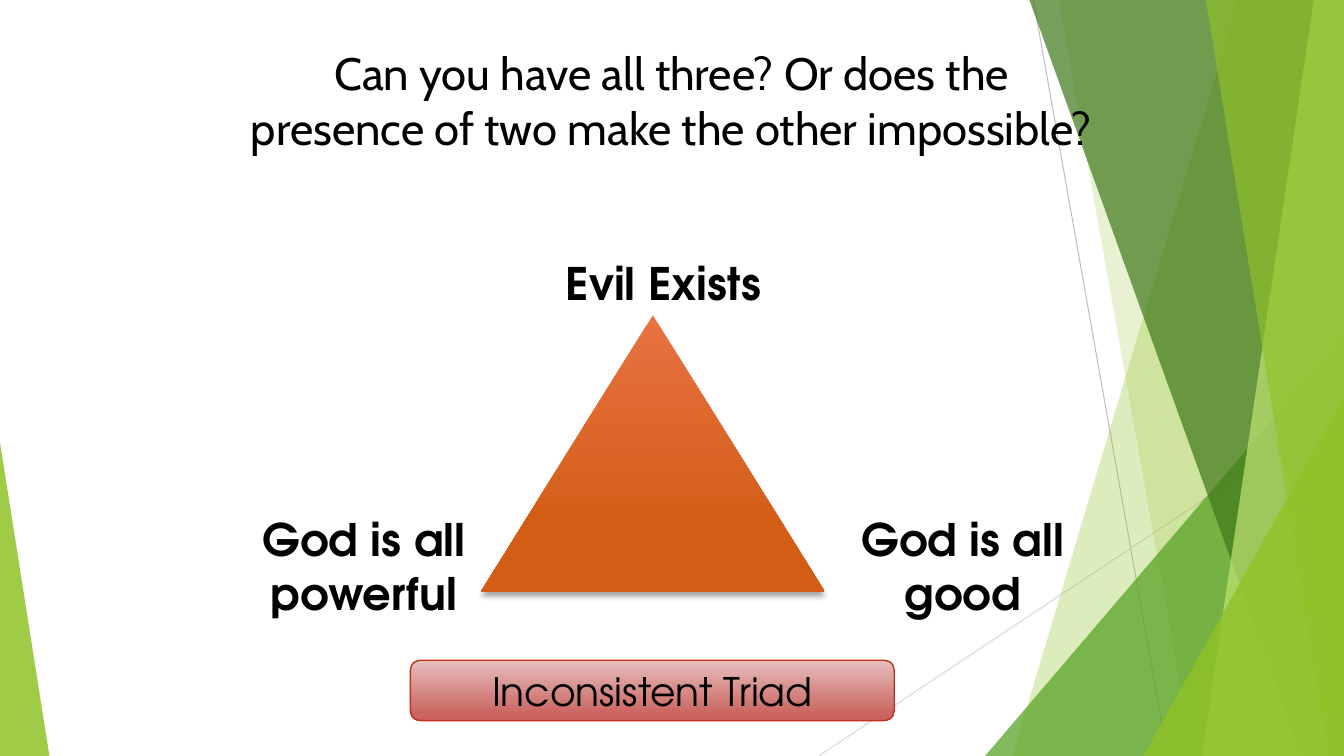
"""Build the Inconsistent Triad slide: three claims around a triangle on a faceted green background."""
from lxml import etree
from pptx import Presentation, util as u
from pptx.dml.color import RGBColor
from pptx.enum import shapes, text
from pptx.oxml import parse_xml
from pptx.oxml.ns import qn

WIDTH, HEIGHT = 13.33, 7.5
A_NS = "http://schemas.openxmlformats.org/drawingml/2006/main"
KIND = shapes.MSO_SHAPE
LEAF, BLACK = "90C226", "000000"
CLAIM_FONT = "TeX Gyre Adventor"

TITLE = ("Can you have all three? Or does the presence of two make the other impossible?",
         (2.35, 0.4, 8.62, 1.75))
CLAIMS = [
    ("Evil Exists", (5.46, 2.49, 2.24, 0.64)),
    ("God is all powerful", (2.01, 5.03, 3.2, 1.18)),
    ("God is all good", (7.95, 5.03, 3.2, 1.18)),
]
TRIAD_BOX = (4.77, 3.13, 3.41, 2.74)
TRIAD_GRADIENT = [(0, "E87242"), (0.78, "D35D16")]
CAPTION = ("Inconsistent Triad", (4.07, 6.55, 4.8, 0.6))
CAPTION_GRADIENT = [(0, "E6BFBE"), (0.88, "CB6560")]

RAYS = [((10.25, 0), (11.58, HEIGHT), "BFBFBF"),
        ((WIDTH, 4.03), (8.12, HEIGHT), "D9D9D9")]
# Bands run to the right edge; facets are right triangles on the bottom edge.
FACETS = [
    ("band", 12.28, 10.04, LEAF, 30),
    ("band", 10.5, 11.83, LEAF, 20),
    ("right", 3.56, 4.17, "54A021", 72),
    ("band", 10.21, 12.91, "3F7819", 70),
    ("band", 13.03, 11.92, "C0E474", 70),
    ("band", 11.96, 13.18, LEAF, 65),
    ("right", 1.99, 3.57, LEAF, 80),
    ("left", 0.49, 3.11, LEAF, 85),
]


def color(hex_code):
    return RGBColor.from_string(hex_code)


def inches(values):
    return [u.Inches(value) for value in values]


def paint(shape, hex_code, opacity):
    shape.shadow.inherit = False
    shape.line.fill.background()
    shape.fill.solid()
    shape.fill.fore_color.rgb = color(hex_code)
    tint = shape.fill._xPr.find(".//" + qn("a:srgbClr"))
    etree.SubElement(tint, qn("a:alpha"), val=str(opacity * 1000))


def shade(shape, gradient):
    shape.shadow.inherit = False
    shape.fill.gradient()
    shape.fill.gradient_angle = 270
    for stop, (position, hex_code) in zip(shape.fill.gradient_stops, gradient):
        stop.position = position
        stop.color.rgb = color(hex_code)


def write(shape, wording, size, font_name, bold=False, anchor=text.MSO_ANCHOR.TOP):
    frame = shape.text_frame
    frame.text = wording
    frame.word_wrap = True
    frame.vertical_anchor = anchor
    paragraph = frame.paragraphs[0]
    paragraph.alignment = text.PP_ALIGN.CENTER
    font = paragraph.font
    font.size, font.name, font.bold = u.Pt(size), font_name, bold
    font.color.rgb = color(BLACK)


def draw_background(slide):
    for start, end, hex_code in RAYS:
        ray = slide.shapes.add_connector(shapes.MSO_CONNECTOR.STRAIGHT, *inches(start + end))
        ray.line.color.rgb = color(hex_code)
        ray.line.width = u.Pt(0.75)
        etree.SubElement(ray._element.spPr, qn("a:effectLst"))
    for side, first, second, hex_code, opacity in FACETS:
        if side == "band":
            outline = slide.shapes.build_freeform(*inches((first, 0)), scale=1.0)
            corners = [(WIDTH, 0), (WIDTH, HEIGHT), (second, HEIGHT)]
            outline.add_line_segments([inches(corner) for corner in corners], close=True)
            facet = outline.convert_to_shape()
        else:
            left = WIDTH - first if side == "right" else 0
            facet = slide.shapes.add_shape(
                KIND.ISOSCELES_TRIANGLE, *inches((left, HEIGHT - second, first, second)))
            facet.adjustments[0] = 1 if side == "right" else 0
        paint(facet, hex_code, opacity)


def draw_triad(slide):
    triad = slide.shapes.add_shape(KIND.ISOSCELES_TRIANGLE, *inches(TRIAD_BOX))
    shade(triad, TRIAD_GRADIENT)
    triad.line.fill.background()
    triad._element.spPr.find(qn("a:effectLst")).append(parse_xml(
        f'<a:outerShdw xmlns:a="{A_NS}" blurRad="{u.Pt(4)}" dist="{u.Pt(3)}" dir="5400000" '
        f'rotWithShape="0"><a:srgbClr val="{BLACK}"><a:alpha val="35000"/></a:srgbClr>'
        '</a:outerShdw>'))
    for wording, box in CLAIMS:
        write(slide.shapes.add_textbox(*inches(box)), wording, 32, CLAIM_FONT, bold=True)


def draw_title(slide):
    wording, box = TITLE
    title = slide.shapes.title
    title.left, title.top, title.width, title.height = inches(box)
    write(title, wording, 32.4, "Cabin")
    title.text_frame.auto_size = text.MSO_AUTO_SIZE.NONE
    slide.shapes.element.append(title._element)


def draw_caption(slide):
    wording, box = CAPTION
    caption = slide.shapes.add_shape(KIND.ROUNDED_RECTANGLE, *inches(box))
    shade(caption, CAPTION_GRADIENT)
    caption.line.color.rgb = color("C42F1A")
    caption.line.width = u.Pt(1)
    write(caption, wording, 28, CLAIM_FONT, anchor=text.MSO_ANCHOR.MIDDLE)


def main():
    deck = Presentation()
    deck.slide_width, deck.slide_height = inches((WIDTH, HEIGHT))
    slide = deck.slides.add_slide(deck.slide_layouts[5])
    for draw in (draw_background, draw_triad, draw_title, draw_caption):
        draw(slide)
    deck.save("out.pptx")


if __name__ == "__main__":
    main()
